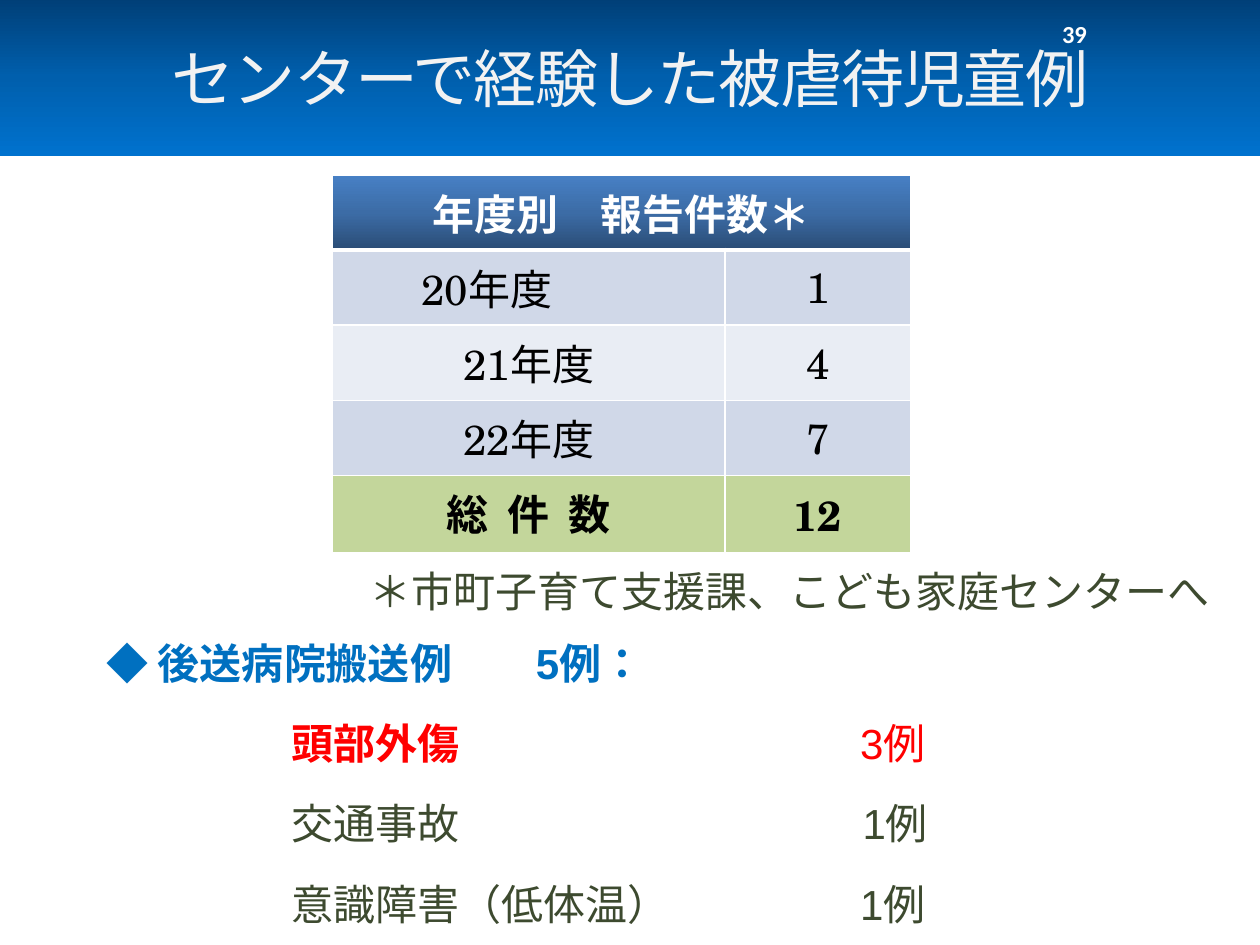
from dataclasses import dataclass

from lxml import etree
from pptx import Presentation
from pptx import util as u
from pptx.dml.color import RGBColor
from pptx.enum import lang, text
from pptx.oxml import ns

SERIF, SANS, HEAD = "TeX Gyre Schola", "Arial", "Calibri"
BLUE, RED, OLIVE = "0070C0", "FF0000", "3D4A2F"
BLACK, WHITE = "000000", "FFFFFF"
CENTER = text.PP_ALIGN.CENTER
MIDDLE = text.MSO_ANCHOR.MIDDLE
GROW = text.MSO_AUTO_SIZE.SHAPE_TO_FIT_TEXT


@dataclass
class Row:
    year: str
    count: str
    fill: str
    bold: bool = False


@dataclass
class Piece:
    text: str
    color: str
    bold: bool = False


@dataclass
class Line:
    pieces: list[Piece]
    tabs: tuple[float, float] = (3.73, 15.19)


ROWS = [
    Row("20年度　　", "1", "D0D8E8"),
    Row("21年度", "4", "E9EDF4"),
    Row("22年度", "7", "D0D8E8"),
    Row("総  件  数", "12", "C3D69B", True),
]

LINES = [
    Line([Piece("◆ ", BLUE), Piece("後送病院搬送例　　5例： \t", BLUE, True)], (6.48, 13.94)),
    Line([Piece("\t頭部外傷　\t", RED, True), Piece("3例", RED)]),
    Line([Piece("\t交通事故 \t\t1例", OLIVE)]),
    Line([Piece("\t意識障害（低体温）\t1例", OLIVE)]),
]


def rgb(value: str) -> RGBColor:
    return RGBColor.from_string(value)


def add(parent, tag: str, **attrs: str):
    return etree.SubElement(parent, ns.qn(tag), attrs)


def style(r, font: str, size: float, color: str, bold: bool = False) -> None:
    r.font.name = font
    r.font.size = u.Pt(size)
    r.font.bold = bold
    r.font.color.rgb = rgb(color)
    r.font.language_id = lang.MSO_LANGUAGE_ID.JAPANESE


def fill_gradient(fill, element, colors: list[str], angle: int) -> None:
    fill.gradient()
    fill.gradient_angle = angle
    stops = next(element.iter(ns.qn("a:gsLst")))
    for old in list(stops):
        stops.remove(old)
    for i, color in enumerate(colors):
        stop = add(stops, "a:gs", pos=str(i * 100000 // (len(colors) - 1)))
        add(stop, "a:srgbClr", val=color)


def set_borders(cell, bottom: float = 1) -> None:
    tc_pr = cell._tc.get_or_add_tcPr()
    widths = {"a:lnL": 1, "a:lnR": 1, "a:lnT": 1, "a:lnB": bottom}
    for i, (tag, width) in enumerate(widths.items()):
        line = etree.Element(ns.qn(tag), w=str(u.Pt(width)))
        add(add(line, "a:solidFill"), "a:srgbClr", val=WHITE)
        tc_pr.insert(i, line)


def set_centered(p, content: str, color: str, bold: bool = False) -> None:
    p.text = content
    p.alignment = CENTER
    style(p.runs[0], SERIF, 24, color, bold)


def add_box(s, left: float, top: float, width: float, height: float):
    box = s.shapes.add_textbox(u.Cm(left), u.Cm(top), u.Cm(width), u.Cm(height))
    box.text_frame.word_wrap = True
    return box.text_frame


def add_title(s) -> None:
    sp = s.shapes.title
    sp.left, sp.top, sp.width, sp.height = u.Cm(0), u.Cm(-0.03), u.Cm(25.4), u.Cm(3.18)
    fill_gradient(sp.fill, sp._element, ["003F77", "005FAD", "0072CE"], 270)
    tf = sp.text_frame
    tf.text = "センターで経験した被虐待児童例"
    tf.vertical_anchor = MIDDLE
    p = tf.paragraphs[0]
    p.alignment = CENTER
    r = p.runs[0]
    style(r, HEAD, 36, "F2F2F2")
    r.font._element.set("spc", "-100")


def add_report_table(s) -> None:
    frame = s.shapes.add_table(
        len(ROWS) + 1, 2, u.Cm(6.7), u.Cm(3.53), u.Cm(11.65), u.Cm(7.55))
    table = frame.table
    table.first_row = table.horz_banding = False
    for column, width in zip(table.columns, (7.92, 3.73)):
        column.width = u.Cm(width)

    header = table.cell(0, 0)
    header.merge(table.cell(0, 1))
    header.vertical_anchor = MIDDLE
    set_centered(header.text_frame.paragraphs[0], "年度別　報告件数＊", WHITE, True)
    fill_gradient(header.fill, header._tc, ["2A4C75", "3C6CA6", "4780C5"], 90)
    for column in range(2):
        set_borders(table.cell(0, column), bottom=3)

    for i, row in enumerate(ROWS, 1):
        for j, content in enumerate((row.year, row.count)):
            cell = table.cell(i, j)
            set_centered(cell.text_frame.paragraphs[0], content, BLACK, row.bold)
            cell.fill.solid()
            cell.fill.fore_color.rgb = rgb(row.fill)
            set_borders(cell)


def add_transfers(s) -> None:
    tf = add_box(s, 1.9, 12.73, 23.01, 6.17)
    tf.auto_size = GROW
    for i, line in enumerate(LINES):
        p = tf.add_paragraph() if i else tf.paragraphs[0]
        p.space_before = u.Pt(17)
        tabs = add(p._p.get_or_add_pPr(), "a:tabLst")
        for stop in line.tabs:
            add(tabs, "a:tab", pos=str(u.Cm(stop)), algn="l")
        for piece in line.pieces:
            r = p.add_run()
            r.text = piece.text
            style(r, SANS, 24, piece.color, piece.bold)


def add_note(s) -> None:
    tf = add_box(s, 6.91, 10.72, 18.01, 1.75)
    tf.auto_size = GROW
    p = tf.paragraphs[0]
    set_centered(p, "＊市町子育て支援課、こども家庭センターへ", OLIVE)
    p.line_spacing = 1.55
    p.space_before = u.Pt(17)


def add_page_number(s) -> None:
    tf = add_box(s, 21.16, 0.23, 2.97, 0.91)
    tf.vertical_anchor = MIDDLE
    tf.text = "39"
    style(tf.paragraphs[0].runs[0], HEAD, 14, WHITE, True)


def main() -> None:
    prs = Presentation()
    prs.slide_width, prs.slide_height = u.Cm(25.4), u.Cm(19.05)
    s = prs.slides.add_slide(prs.slide_layouts[5])
    add_title(s)
    add_report_table(s)
    add_transfers(s)
    add_note(s)
    add_page_number(s)
    prs.save("out.pptx")


if __name__ == "__main__":
    main()
